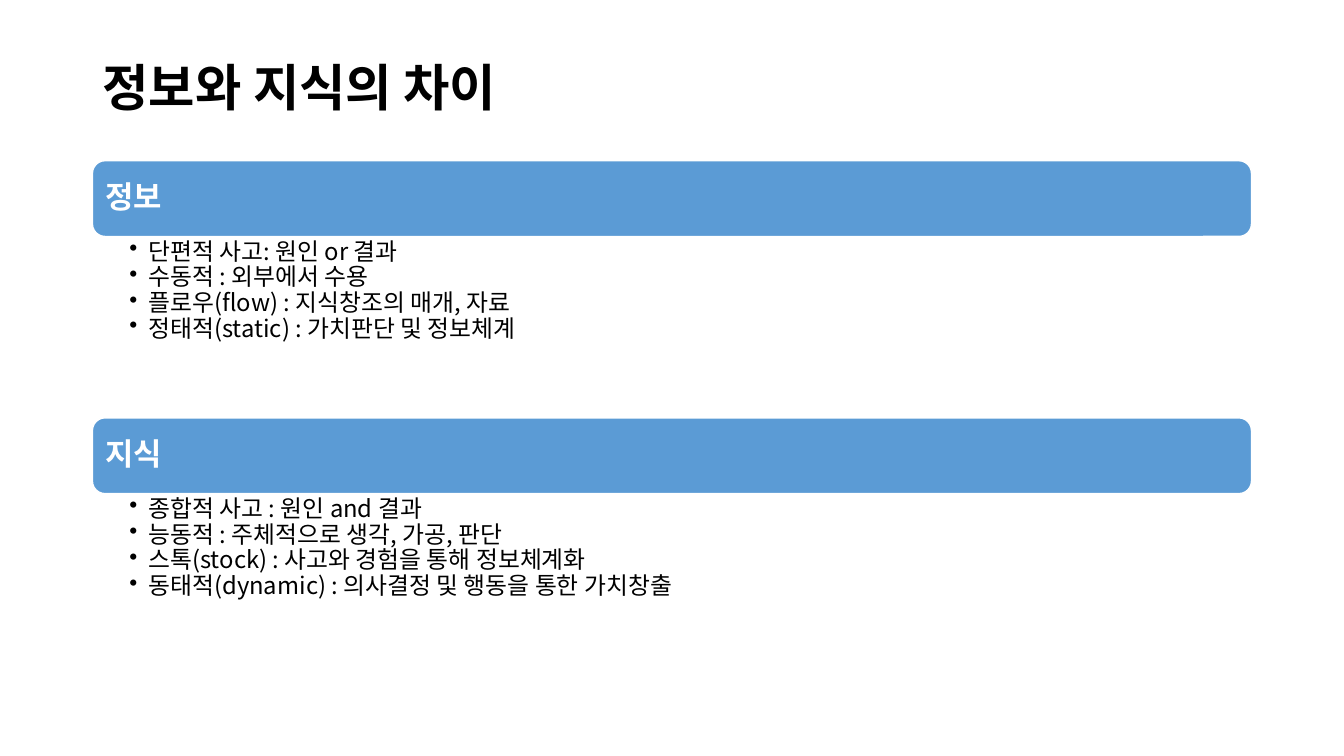
from lxml.etree import SubElement
from pptx import Presentation
from pptx.dml.color import RGBColor
from pptx.enum.shapes import MSO_SHAPE
from pptx.enum.text import MSO_ANCHOR, MSO_AUTO_SIZE, PP_ALIGN
from pptx.oxml.ns import qn
from pptx.util import Cm, Pt

TITLE = "정보와 지식의 차이"
SECTIONS = [
    ("정보", [
        "단편적 사고: 원인 or 결과",
        "수동적 : 외부에서 수용",
        "플로우(flow) : 지식창조의 매개, 자료",
        "정태적(static) : 가치판단 및 정보체계",
    ]),
    ("지식", [
        "종합적 사고 : 원인 and 결과",
        "능동적 : 주체적으로 생각, 가공, 판단",
        "스톡(stock) : 사고와 경험을 통해 정보체계화",
        "동태적(dynamic) : 의사결정 및 행동을 통한 가치창출",
    ]),
]
COLORS = {"bar": "5B9BD5", "white": "FFFFFF", "black": "000000"}
FONT = "Noto Sans CJK KR"
LEFT, WIDTH = Cm(2.33), Cm(29.21)
TITLE_TOP, TITLE_HEIGHT = Cm(1.02), Cm(2.49)
FIRST_TOP, BAR_HEIGHT, LIST_HEIGHT = Cm(4.05), Cm(1.91), Cm(4.57)
BULLET_INDENT = Cm(0.48)


def color(name):
    return RGBColor.from_string(COLORS[name])


def set_margins(frame, left, top, right, bottom):
    frame.margin_left, frame.margin_top = Cm(left), Cm(top)
    frame.margin_right, frame.margin_bottom = Cm(right), Cm(bottom)


def format_paragraph(paragraph, size, color_name, bold=False):
    paragraph.alignment = PP_ALIGN.LEFT
    paragraph.line_spacing = 0.9
    paragraph.space_before = paragraph.space_after = Pt(0)
    for run in paragraph.runs:
        run.font.name = FONT
        run.font.size = Pt(size)
        run.font.bold = bold
        run.font.color.rgb = color(color_name)
        SubElement(run.font._element, qn("a:ea"), typeface=FONT)


def add_bullet(paragraph):
    properties = paragraph._p.get_or_add_pPr()
    properties.set("marL", str(BULLET_INDENT))
    properties.set("indent", str(-BULLET_INDENT))
    SubElement(properties, qn("a:buChar"), char="•")


def add_title(slide):
    title = slide.shapes.title
    title.left, title.top, title.width, title.height = LEFT, TITLE_TOP, WIDTH, TITLE_HEIGHT
    frame = title.text_frame
    frame.text = TITLE
    frame.auto_size = MSO_AUTO_SIZE.NONE
    frame.vertical_anchor = MSO_ANCHOR.MIDDLE
    format_paragraph(frame.paragraphs[0], 36, "black", True)


def add_bar(slide, top, heading):
    bar = slide.shapes.add_shape(MSO_SHAPE.ROUNDED_RECTANGLE, LEFT, top, WIDTH, BAR_HEIGHT)
    bar.shadow.inherit = False
    bar.fill.solid()
    bar.fill.fore_color.rgb = color("bar")
    bar.line.color.rgb = color("white")
    bar.line.width = Pt(1)
    frame = bar.text_frame
    frame.text = heading
    frame.vertical_anchor = MSO_ANCHOR.MIDDLE
    set_margins(frame, 0.23, 0.3, 0.23, 0.3)
    format_paragraph(frame.paragraphs[0], 22, "white", True)


def add_list(slide, top, items):
    frame = slide.shapes.add_textbox(LEFT, top, WIDTH, LIST_HEIGHT).text_frame
    frame.word_wrap = True
    set_margins(frame, 0.93, 0.08, 0.43, 0.08)
    frame.text = "\n".join(items)
    for paragraph in frame.paragraphs:
        paragraph.level = 1
        add_bullet(paragraph)
        format_paragraph(paragraph, 17, "black")


def main():
    presentation = Presentation()
    presentation.slide_width, presentation.slide_height = Cm(33.87), Cm(19.05)
    slide = presentation.slides.add_slide(presentation.slide_layouts[5])
    add_title(slide)
    for index, (heading, items) in enumerate(SECTIONS):
        top = FIRST_TOP + index * (BAR_HEIGHT + LIST_HEIGHT)
        add_bar(slide, top, heading)
        add_list(slide, top + BAR_HEIGHT, items)
    presentation.save("out.pptx")


if __name__ == "__main__":
    main()
